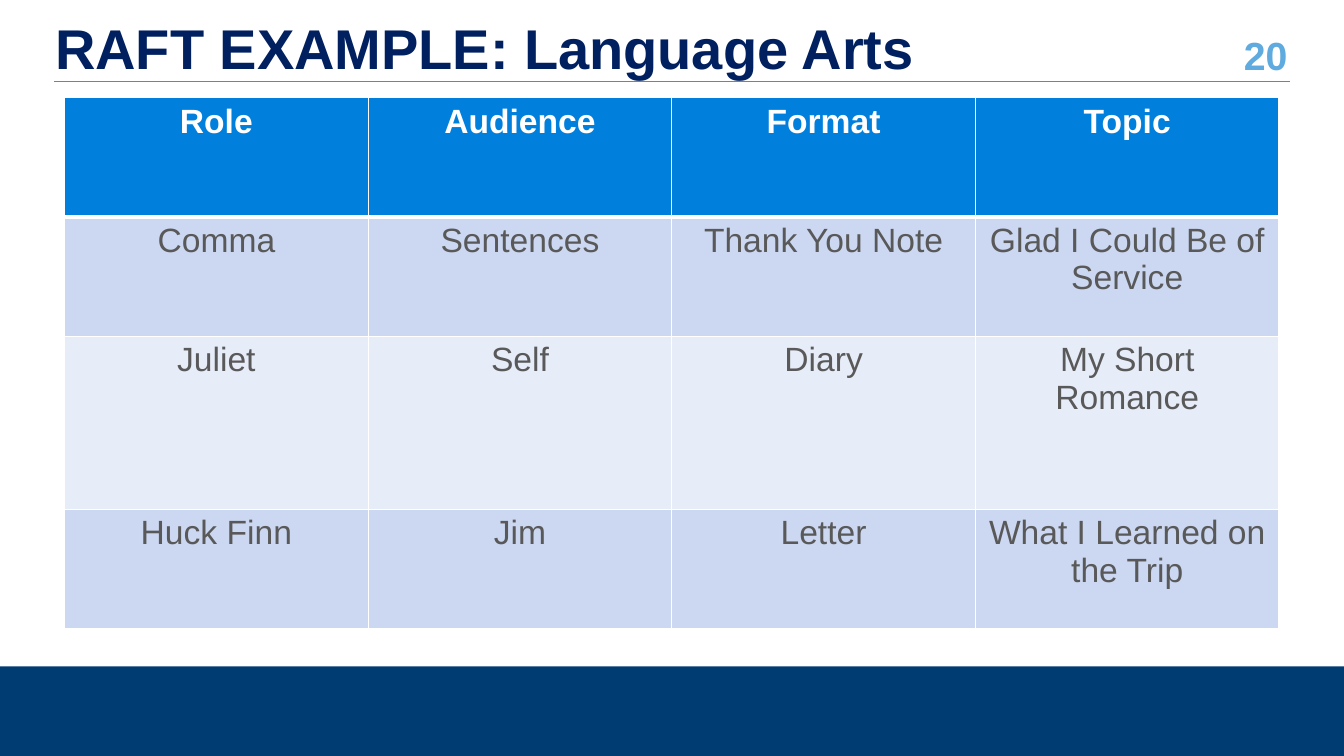
from dataclasses import dataclass

from lxml import etree
from pptx import Presentation
from pptx.dml.color import RGBColor
from pptx.enum.shapes import MSO_CONNECTOR, MSO_SHAPE
from pptx.enum.text import MSO_ANCHOR, PP_ALIGN
from pptx.oxml.ns import qn
from pptx.util import Pt

RECT = MSO_SHAPE.RECTANGLE
LINE = MSO_CONNECTOR.STRAIGHT
MIDDLE = MSO_ANCHOR.MIDDLE
LEFT, CENTER, RIGHT = PP_ALIGN.LEFT, PP_ALIGN.CENTER, PP_ALIGN.RIGHT


@dataclass(frozen=True)
class Theme:
    font: str = "Arial"
    navy: str = "002060"
    band: str = "003B71"
    sky: str = "5FAADE"
    rule: str = "808080"
    head: str = "007FDC"
    odd: str = "CCD8F2"
    even: str = "E7ECF9"
    body: str = "595959"
    white: str = "FFFFFF"
    title_size: float = 40
    page_size: float = 28
    cell_size: float = 24


THEME = Theme()
ROWS = [
    ["Role", "Audience", "Format", "Topic"],
    ["Comma", "Sentences", "Thank You Note", "Glad I Could Be of Service"],
    ["Juliet", "Self", "Diary", "My Short Romance"],
    ["Huck Finn", "Jim", "Letter", "What I Learned on the Trip"],
]
HEIGHTS = [85.2, 85.2, 123.8, 85.2]
COL_WIDTH = 216.9


def rgb(color):
    return RGBColor.from_string(color)


def write(frame, text, size, color, bold, align):
    para = frame.paragraphs[0]
    para.alignment = align
    run = para.add_run()
    run.text = text
    style = {"name": THEME.font, "size": Pt(size), "bold": bold}
    for key, value in style.items():
        setattr(run.font, key, value)
    run.font.color.rgb = rgb(color)
    return para


def add_band(slide, x, y, w, h):
    band = slide.shapes.add_shape(RECT, Pt(x), Pt(y), Pt(w), Pt(h))
    band.shadow.inherit = False
    band.fill.solid()
    band.fill.fore_color.rgb = rgb(THEME.band)
    band.line.fill.background()


def add_rule(slide, x1, x2, y):
    rule = slide.shapes.add_connector(LINE, Pt(x1), Pt(y), Pt(x2), Pt(y))
    rule.line.color.rgb = rgb(THEME.rule)
    rule.line.width = Pt(0.5)
    etree.SubElement(rule._element.spPr, qn("a:effectLst"))


def add_label(slide, box, text, size, color, align):
    label = slide.shapes.add_textbox(*map(Pt, box))
    frame = label.text_frame
    frame.word_wrap = True
    frame.vertical_anchor = MIDDLE
    return write(frame, text, size, color, True, align)


def add_edges(cell, widths):
    # Borders come before the fill in the cell properties
    props = cell._tc.get_or_add_tcPr()
    for spot, (side, width) in enumerate(widths.items()):
        edge = etree.Element(qn(f"a:ln{side}"), w=str(Pt(width)))
        fill = etree.SubElement(edge, qn("a:solidFill"))
        etree.SubElement(fill, qn("a:srgbClr"), val=THEME.white)
        props.insert(spot, edge)


def add_grid(slide, x, y):
    width, height = COL_WIDTH * len(ROWS[0]), sum(HEIGHTS)
    grid = slide.shapes.add_table(
        len(ROWS), len(ROWS[0]), Pt(x), Pt(y), Pt(width), Pt(height)
    ).table
    for col in grid.columns:
        col.width = Pt(COL_WIDTH)
    for r, texts in enumerate(ROWS):
        grid.rows[r].height = Pt(HEIGHTS[r])
        head = r == 0
        fill = THEME.head if head else THEME.odd if r % 2 else THEME.even
        color = THEME.white if head else THEME.body
        edges = {"L": 1, "R": 1, "T": 3 if r == 1 else 1, "B": 3 if head else 1}
        for c, text in enumerate(texts):
            cell = grid.cell(r, c)
            cell.fill.solid()
            cell.fill.fore_color.rgb = rgb(fill)
            add_edges(cell, edges)
            write(cell.text_frame, text, THEME.cell_size, color, head, CENTER)


def main():
    deck = Presentation()
    deck.slide_width, deck.slide_height = Pt(960), Pt(540)
    slide = deck.slides.add_slide(deck.slide_layouts[6])

    # Footer band, page number and header rule
    add_band(slide, 0, 476, 960, 64)
    add_label(slide, (869, 23.8, 57.6, 30.2), "20",
              THEME.page_size, THEME.sky, RIGHT)
    add_rule(slide, 921.6, 38.9, 57.9)

    # Title
    title = add_label(slide, (32.4, 21.6, 835.2, 30.2),
                      "RAFT EXAMPLE: Language Arts",
                      THEME.title_size, THEME.navy, LEFT)
    title.line_spacing = 0.9

    # Table of examples
    add_grid(slide, 46.1, 69.8)

    deck.save("out.pptx")


if __name__ == "__main__":
    main()
